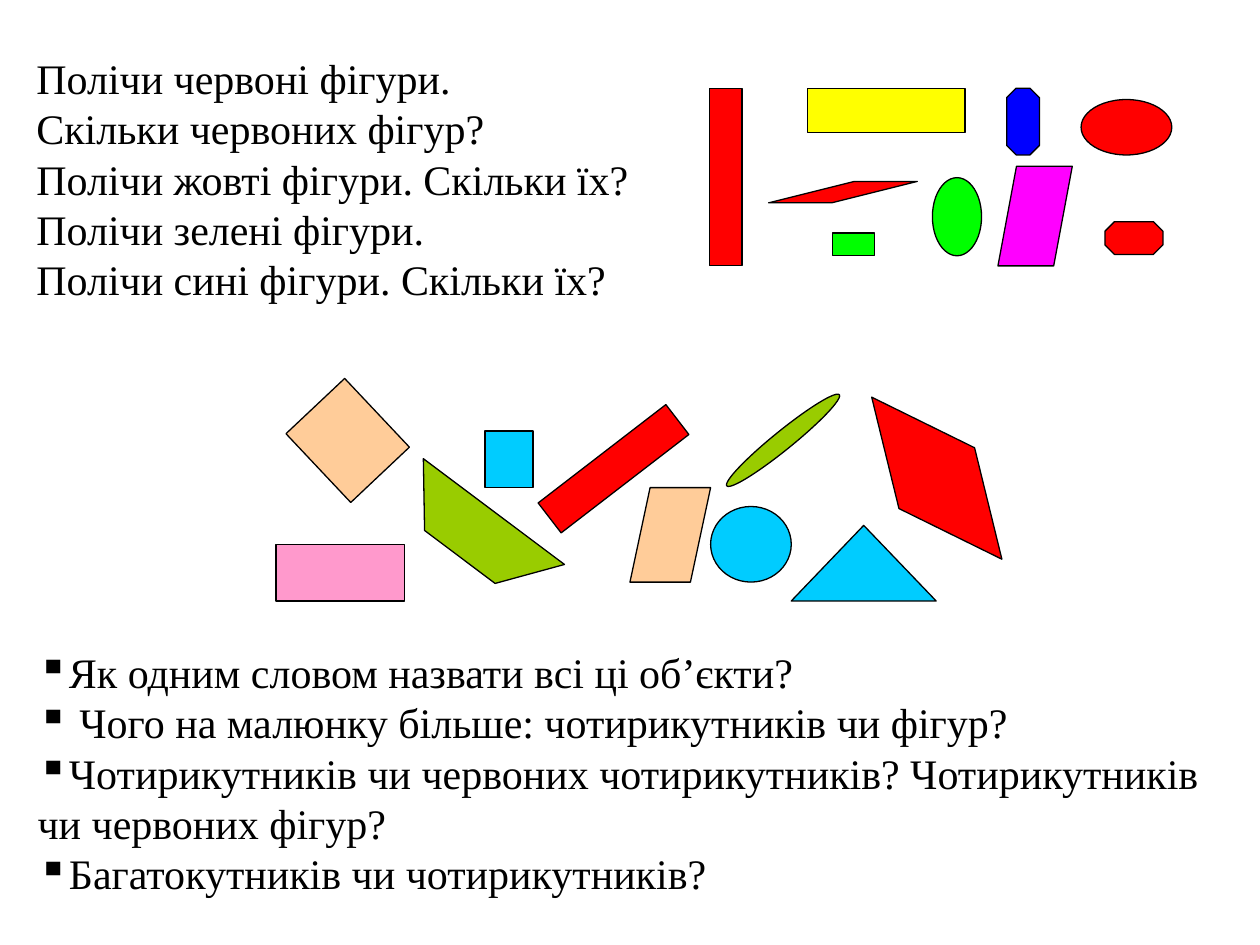
from lxml import etree
from pptx import Presentation
from pptx.dml.color import RGBColor
from pptx.enum.shapes import MSO_SHAPE
from pptx.enum.text import MSO_ANCHOR
from pptx.oxml.ns import qn
from pptx.util import Inches, Pt

RECT = MSO_SHAPE.RECTANGLE
OVAL = MSO_SHAPE.OVAL
PARALLELOGRAM = MSO_SHAPE.PARALLELOGRAM
OCTAGON = MSO_SHAPE.OCTAGON
TRIANGLE = MSO_SHAPE.ISOSCELES_TRIANGLE
DIAMOND = MSO_SHAPE.DIAMOND
TOP, MIDDLE = MSO_ANCHOR.TOP, MSO_ANCHOR.MIDDLE

BLACK = RGBColor(0x00, 0x00, 0x00)
RED = RGBColor(0xFF, 0x00, 0x00)
GREEN = RGBColor(0x00, 0xFF, 0x00)
BLUE = RGBColor(0x00, 0x00, 0xFF)
YELLOW = RGBColor(0xFF, 0xFF, 0x00)
MAGENTA = RGBColor(0xFF, 0x00, 0xFF)
PEACH = RGBColor(0xFF, 0xCC, 0x99)
SKY = RGBColor(0x00, 0xCC, 0xFF)
OLIVE = RGBColor(0x99, 0xCC, 0x00)
PINK = RGBColor(0xFF, 0x99, 0xCC)


def write(p, text, size=24, font="Times New Roman", color=BLACK, bullet=None):
    """Fill a paragraph; a vertical tab in the text is a line break."""
    p.text = text
    for r in p.runs:
        r.font.size = Pt(size)
        r.font.name = font
        r.font.color.rgb = color
    if bullet:
        etree.SubElement(p._p.get_or_add_pPr(), qn("a:buChar")).set("char", bullet)


class Board:
    """Holds the outline style and the slide being drawn."""

    line_color = BLACK
    line_width = Pt(0.75)

    def __init__(self, slide):
        self.slide = slide

    def text(self, box, paragraphs, anchor=TOP, right=0.1, **fmt):
        tf = self.slide.shapes.add_textbox(*map(Inches, box)).text_frame
        tf.word_wrap = True
        tf.vertical_anchor = anchor
        tf.margin_right = Inches(right)
        for i, text in enumerate(paragraphs):
            p = tf.add_paragraph() if i else tf.paragraphs[0]
            write(p, text, **fmt)

    def group(self):
        return self.slide.shapes.add_group_shape().shapes

    def style(self, sp, fill):
        sp.shadow.inherit = False
        sp.fill.solid()
        sp.fill.fore_color.rgb = fill
        sp.line.color.rgb = self.line_color
        sp.line.width = self.line_width

    def figure(self, shapes, kind, box, fill, rotation=0, adj=None):
        sp = shapes.add_shape(kind, *map(Inches, box))
        sp.rotation = rotation
        if adj is not None:
            sp.adjustments[0] = adj
        self.style(sp, fill)

    def polygon(self, shapes, points, fill):
        start, *rest = [(Inches(x), Inches(y)) for x, y in points]
        builder = shapes.build_freeform(*start)
        builder.add_line_segments(rest, close=True)
        self.style(builder.convert_to_shape(), fill)


def main():
    prs = Presentation()
    prs.slide_width, prs.slide_height = Inches(10), Inches(7.5)
    board = Board(prs.slides.add_slide(prs.slide_layouts[6]))

    # Counting tasks
    tasks = ["Полічи червоні фігури.", "Скільки червоних фігур?",
             "Полічи жовті фігури. Скільки їх?", "Полічи зелені фігури.",
             "Полічи сині фігури. Скільки їх?"]
    board.text((0.19, 0.55, 5.67, 1.73), ["\v".join(tasks)], anchor=MIDDLE, right=0.05)

    # Figures to count by colour
    counted = board.group()
    for kind, box, fill, adj in [
        (RECT, (5.63, 0.7, 0.26, 1.41), RED, None),
        (RECT, (6.61, 1.85, 0.33, 0.18), GREEN, None),
        (RECT, (6.41, 0.7, 1.25, 0.35), YELLOW, None),
        (OVAL, (7.4, 1.41, 0.39, 0.62), GREEN, None),
        (OVAL, (8.58, 0.79, 0.72, 0.44), RED, None),
        (PARALLELOGRAM, (6.1, 1.44, 1.18, 0.17), RED, 4),
        (PARALLELOGRAM, (7.92, 1.32, 0.59, 0.79), MAGENTA, 0.25),
        (OCTAGON, (8.77, 1.76, 0.46, 0.26), RED, 0.29),
        (OCTAGON, (7.99, 0.7, 0.26, 0.53), BLUE, 0.29),
    ]:
        board.figure(counted, kind, box, fill, adj=adj)

    # Questions
    board.text((0.2, 5.08, 9.61, 2.12), [
        "Як одним словом назвати всі ці об’єкти?",
        " Чого на малюнку більше: чотирикутників чи фігур?",
        "Чотирикутників чи червоних чотирикутників? Чотирикутників чи червоних фігур?",
        "Багатокутників чи чотирикутників?",
    ], bullet="▪")

    # Figures to compare by kind
    compared = board.group()
    for kind, box, fill, rotation in [
        (RECT, (2.44, 3.12, 0.64, 0.75), PEACH, 316.7),
        (RECT, (3.85, 3.42, 0.38, 0.45), SKY, 0),
        (RECT, (4.23, 3.57, 1.28, 0.3), RED, 322.4),
        (PARALLELOGRAM, (5, 3.87, 0.64, 0.75), PEACH, 0),
        (OVAL, (5.64, 4.02, 0.64, 0.6), SKY, 0),
        (TRIANGLE, (6.28, 4.17, 1.15, 0.6), SKY, 0),
        (DIAMOND, (7.05, 2.97, 0.77, 1.65), RED, 321.2),
        (OVAL, (5.64, 3.42, 1.15, 0.15), OLIVE, 321),
        (RECT, (2.19, 4.32, 1.02, 0.45), PINK, 0),
    ]:
        board.figure(compared, kind, box, fill, rotation)
    board.polygon(compared, [(3.36, 3.64), (3.37, 4.21), (3.93, 4.63), (4.48, 4.48)], OLIVE)

    prs.save("out.pptx")


if __name__ == "__main__":
    main()
